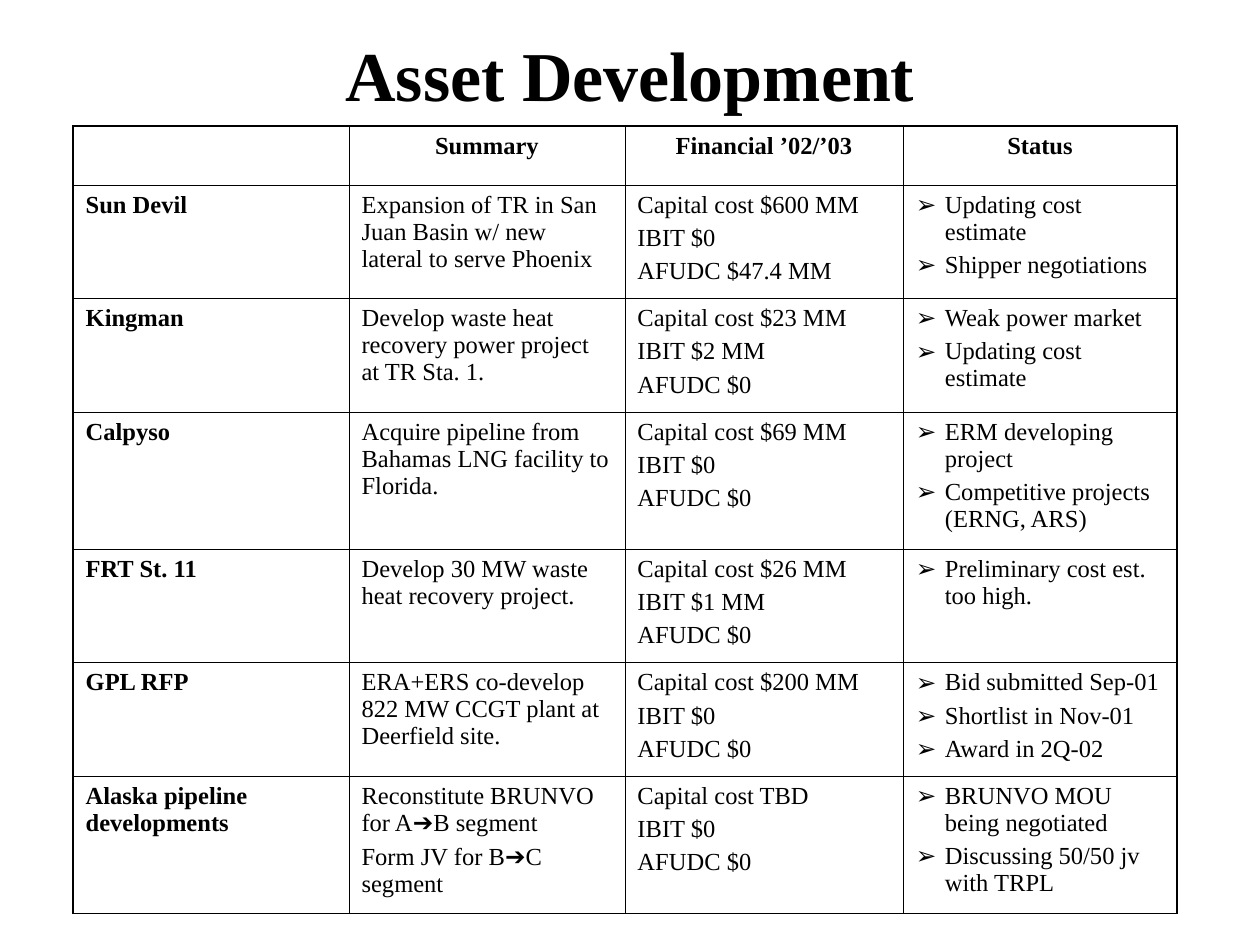
from pptx import Presentation, util as u
from pptx.dml.color import RGBColor
from pptx.enum import text
from pptx.oxml import parse_xml
from pptx.oxml.ns import nsdecls

# Content: each cell is a list of paragraphs
TITLE = "Asset Development"
HEADINGS = ["", "Summary", "Financial ’02/’03", "Status"]
PROJECTS = [
    ("Sun Devil",
     ["Expansion of TR in San Juan Basin w/ new lateral to serve Phoenix"],
     ["Capital cost $600 MM", "IBIT $0", "AFUDC $47.4 MM"],
     ["Updating cost estimate", "Shipper negotiations"]),
    ("Kingman",
     ["Develop waste heat recovery power project at TR Sta. 1."],
     ["Capital cost $23 MM", "IBIT $2 MM", "AFUDC $0"],
     ["Weak power market", "Updating cost estimate"]),
    ("Calpyso",
     ["Acquire pipeline from Bahamas LNG facility to Florida."],
     ["Capital cost $69 MM", "IBIT $0", "AFUDC $0"],
     ["ERM developing project", "Competitive projects (ERNG, ARS)"]),
    ("FRT St. 11",
     ["Develop 30 MW waste heat recovery project."],
     ["Capital cost $26 MM", "IBIT $1 MM", "AFUDC $0"],
     ["Preliminary cost est. too high."]),
    ("GPL RFP",
     ["ERA+ERS co-develop 822 MW CCGT plant at Deerfield site."],
     ["Capital cost $200 MM", "IBIT $0", "AFUDC $0"],
     ["Bid submitted Sep-01", "Shortlist in Nov-01", "Award in 2Q-02"]),
    ("Alaska pipeline developments",
     ["Reconstitute BRUNVO for A➔B segment", "Form JV for B➔C segment"],
     ["Capital cost TBD", "IBIT $0", "AFUDC $0"],
     ["BRUNVO MOU being negotiated", "Discussing 50/50 jv with TRPL"]),
]
ARROW, BULLET = "➔", "➢"

THEME = {
    "ink": "000000", "font": "Times New Roman", "symbol_font": "Arial",
    "title_size": 40, "body_size": 14, "gap": 3.5,
    "outer_line": 1.08, "inner_line": 0.45,
}
COLUMN_WIDTHS = [2.19, 2.19, 2.21, 2.17]
HEADER_HEIGHT, ROW_HEIGHT, TALL_ROW_HEIGHT = 0.47, 0.9, 1.09
BULLET_INDENT = u.Inches(0.23)


def add_run(paragraph, words, size, bold, font):
    run = paragraph.add_run()
    run.text = words
    run.font.size = u.Pt(size)
    run.font.bold = bold
    run.font.name = font
    run.font.color.rgb = RGBColor.from_string(THEME["ink"])


def add_bullet(paragraph):
    props = paragraph._p.get_or_add_pPr()
    props.set("marL", str(BULLET_INDENT))
    props.set("indent", str(-BULLET_INDENT))
    for xml in (f'<a:buClr {nsdecls("a")}><a:srgbClr val="{THEME["ink"]}"/></a:buClr>',
                f'<a:buFont {nsdecls("a")} typeface="{THEME["symbol_font"]}"/>',
                f'<a:buChar {nsdecls("a")} char="{BULLET}"/>'):
        props.append(parse_xml(xml))


def fill_cell(cell, lines, bold=False, centred=False, bulleted=False):
    frame = cell.text_frame
    for index, line in enumerate(lines):
        paragraph = frame.add_paragraph() if index else frame.paragraphs[0]
        if index:
            paragraph.space_before = u.Pt(THEME["gap"])
        if centred:
            paragraph.alignment = text.PP_ALIGN.CENTER
        if bulleted:
            add_bullet(paragraph)
        for part in line.partition(ARROW):
            if part:
                font = THEME["symbol_font"] if part == ARROW else THEME["font"]
                add_run(paragraph, part, THEME["body_size"], bold, font)


def rule_cell(cell, outer_sides):
    props = cell._tc.get_or_add_tcPr()
    for position, side in enumerate("LRTB"):
        width = THEME["outer_line" if side in outer_sides else "inner_line"]
        props.insert(position, parse_xml(
            f'<a:ln{side} {nsdecls("a")} w="{u.Pt(width)}"><a:solidFill>'
            f'<a:srgbClr val="{THEME["ink"]}"/></a:solidFill></a:ln{side}>'))


deck = Presentation()
deck.slide_width, deck.slide_height = u.Inches(10), u.Inches(7.5)
slide = deck.slides.add_slide(deck.slide_layouts[6])

# Title
title = slide.shapes.add_textbox(u.Inches(0.75), u.Inches(0.33),
                                 u.Inches(8.5), u.Inches(0.5)).text_frame
title.word_wrap = True
title.vertical_anchor = text.MSO_ANCHOR.MIDDLE
title.paragraphs[0].alignment = text.PP_ALIGN.CENTER
add_run(title.paragraphs[0], TITLE, THEME["title_size"], True, THEME["font"])

# Project table: a row is tall when its last cell wraps onto four lines
row_heights = [HEADER_HEIGHT] + [
    TALL_ROW_HEIGHT if name.startswith(("Calpyso", "Alaska")) else ROW_HEIGHT
    for name, *_ in PROJECTS]
last_row, last_column = len(PROJECTS), len(HEADINGS) - 1
table = slide.shapes.add_table(
    last_row + 1, last_column + 1, u.Inches(0.58), u.Inches(1),
    u.Inches(sum(COLUMN_WIDTHS)), u.Inches(sum(row_heights))).table
table.first_row = table.horz_banding = False
for column, width in zip(table.columns, COLUMN_WIDTHS):
    column.width = u.Inches(width)
for row, height in zip(table.rows, row_heights):
    row.height = u.Inches(height)

# Wording
for c, heading in enumerate(HEADINGS):
    fill_cell(table.cell(0, c), [heading], bold=True, centred=True)
for r, (name, summary, financial, status) in enumerate(PROJECTS, 1):
    fill_cell(table.cell(r, 0), [name], bold=True)
    fill_cell(table.cell(r, 1), summary)
    fill_cell(table.cell(r, 2), financial)
    fill_cell(table.cell(r, 3), status, bulleted=True)

# Rules: heavier around the outside
for r in range(last_row + 1):
    for c in range(last_column + 1):
        cell = table.cell(r, c)
        cell.fill.background()
        edges = {"L": c == 0, "R": c == last_column, "T": r == 0, "B": r == last_row}
        rule_cell(cell, [side for side, is_outer in edges.items() if is_outer])

deck.save("out.pptx")
